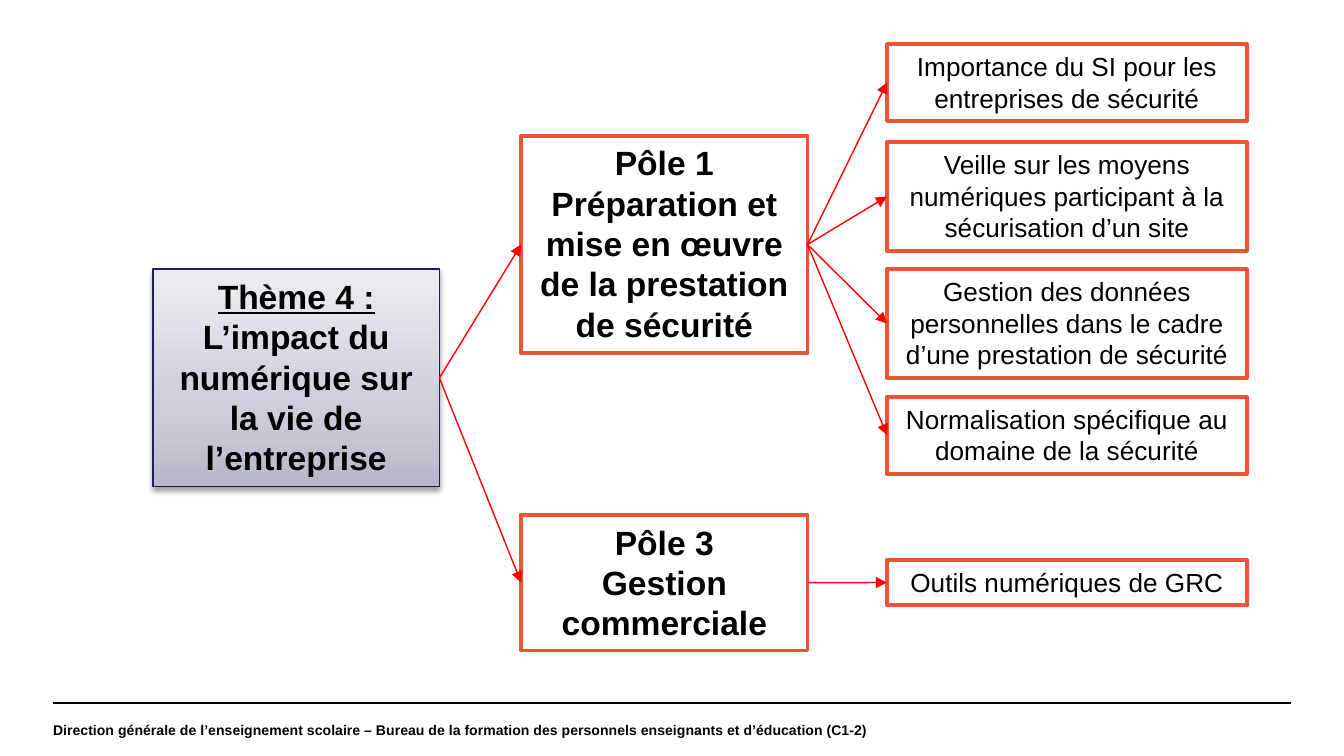
"""Build the slide mapping theme 4 to its two poles and their topics."""
from copy import deepcopy

from lxml import etree
from pptx import Presentation
from pptx import util as u
from pptx.dml.color import RGBColor
from pptx.enum import shapes, text
from pptx.oxml import parse_xml
from pptx.oxml.ns import nsdecls, qn

BLACK = RGBColor(0x00, 0x00, 0x00)
WHITE = RGBColor(0xFF, 0xFF, 0xFF)
ORANGE = RGBColor(0xEA, 0x54, 0x33)
RED = RGBColor(0xFF, 0x00, 0x00)
NAVY = RGBColor(0x1F, 0x1F, 0x59)
LAVENDERS = [
    (0, RGBColor(0xB7, 0xB7, 0xCA)),
    (0.35, RGBColor(0xCD, 0xCD, 0xDA)),
    (1, RGBColor(0xEC, 0xEC, 0xF1)),
]
THEME_LEFT, POLE_LEFT, TOPIC_LEFT = 82, 279.2, 475.2
MAIN_WIDTH, TOPIC_WIDTH = 153.4, 192.8

POLES = [
    (72.7, 116.6, ["Pôle 1", "Préparation et mise en œuvre de la prestation de sécurité"], [
        (23.6, 41.2, "Importance du SI pour les entreprises de sécurité"),
        (76.2, 58.2, "Veille sur les moyens numériques participant à la sécurisation d’un site"),
        (144.2, 58.2, "Gestion des données personnelles dans le cadre d’une prestation de sécurité"),
        (212.6, 41.2, "Normalisation spécifique au domaine de la sécurité"),
    ]),
    (275.8, 72.7, ["Pôle 3", "Gestion commerciale"], [
        (300, 24.2, "Outils numériques de GRC"),
    ]),
]


def add_box(left, top, width, height, paragraphs, size, bold):
    box = page.shapes.add_shape(shapes.MSO_SHAPE.RECTANGLE, u.Pt(left), u.Pt(top), u.Pt(width), u.Pt(height))
    box.fill.solid()
    box.fill.fore_color.rgb = WHITE
    box.line.color.rgb = ORANGE
    box.line.width = u.Pt(2)
    box.shadow.inherit = False
    frame = box.text_frame
    frame.word_wrap = True
    frame.auto_size = text.MSO_AUTO_SIZE.SHAPE_TO_FIT_TEXT
    frame.vertical_anchor = text.MSO_ANCHOR.TOP
    for index, runs in enumerate(paragraphs):
        para = frame.add_paragraph() if index else frame.paragraphs[0]
        para.alignment = text.PP_ALIGN.CENTER
        for words in runs:
            span = para.add_run()
            span.text = words
            span.font.name = "Arial"
            span.font.size = u.Pt(size)
            span.font.bold = bold
            span.font.color.rgb = BLACK
    return box


def add_arrow(source, target):
    arrow = page.shapes.add_connector(shapes.MSO_CONNECTOR.STRAIGHT, 0, 0, 0, 0)
    arrow.begin_connect(source, 3)
    arrow.end_connect(target, 1)
    arrow.line.color.rgb = RED
    arrow.line.width = u.Pt(0.75)
    etree.SubElement(arrow.line._get_or_add_ln(), qn("a:tailEnd"), type="triangle")
    etree.SubElement(arrow._element.spPr, qn("a:effectLst"))


deck = Presentation()
deck.slide_width, deck.slide_height = u.Pt(720), u.Pt(405)
page = deck.slides.add_slide(deck.slide_layouts[6])

rule = page.shapes.add_connector(shapes.MSO_CONNECTOR.STRAIGHT, u.Pt(28.4), u.Pt(376.6), u.Pt(691.6), u.Pt(376.6))
rule.line.color.rgb = BLACK
rule.line.width = u.Pt(0.8)
etree.SubElement(rule._element.spPr, qn("a:effectLst"))

footer = page.shapes.add_textbox(u.Pt(28.4), u.Pt(376.9), u.Pt(672), u.Pt(28.1)).text_frame
footer.word_wrap = True
footer.vertical_anchor = text.MSO_ANCHOR.MIDDLE
footer.margin_left = footer.margin_right = footer.margin_top = footer.margin_bottom = 0
span = footer.paragraphs[0].add_run()
span.text = (
    "Direction générale de l’enseignement scolaire – "
    "Bureau de la formation des personnels enseignants et d’éducation (C1-2)"
)
span.font.name = "Arial"
span.font.size = u.Pt(7.5)
span.font.bold = True
span.font.color.rgb = BLACK

theme_runs = ["Thème 4 : ", "L’impact du numérique sur la vie de l’entreprise"]
theme = add_box(THEME_LEFT, 144.2, MAIN_WIDTH, 116.6, [theme_runs], 18, True)
theme.text_frame.paragraphs[0].runs[0].font.underline = True
theme.line.color.rgb = NAVY
theme.line.width = u.Pt(0.75)
theme.fill.gradient()
theme.fill.gradient_angle = 90
stops = theme._element.spPr.find(".//" + qn("a:gsLst"))
stops.append(deepcopy(stops[0]))
for stop, (position, color) in zip(theme.fill.gradient_stops, LAVENDERS):
    stop.position = position
    stop.color.rgb = color
theme._element.spPr.find(qn("a:effectLst")).append(parse_xml(
    f'<a:outerShdw {nsdecls("a")} blurRad="{u.Pt(3.1)}" dist="{u.Pt(1.6)}" dir="5400000" rotWithShape="0">'
    '<a:srgbClr val="000000"><a:alpha val="38000"/></a:srgbClr></a:outerShdw>'
))

for top, height, lines, topics in POLES:
    pole = add_box(POLE_LEFT, top, MAIN_WIDTH, height, [[line] for line in lines], 18, True)
    add_arrow(theme, pole)
    for topic_top, topic_height, label in topics:
        topic = add_box(TOPIC_LEFT, topic_top, TOPIC_WIDTH, topic_height, [[label]], 14, False)
        add_arrow(pole, topic)

deck.save("out.pptx")
